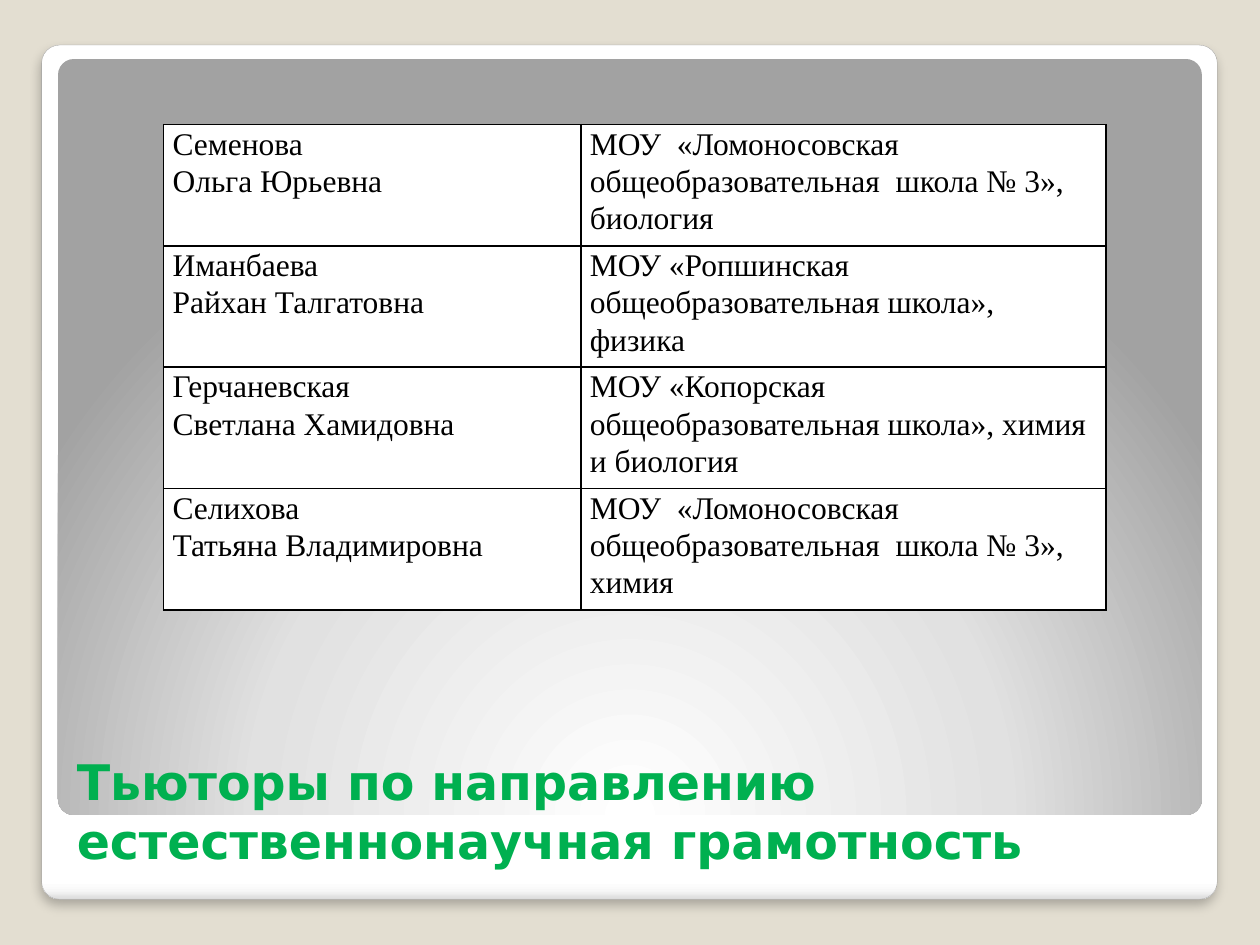
"""Build a slide listing the tutors for science literacy."""
from lxml.etree import SubElement
from pptx import Presentation
from pptx.dml.color import RGBColor
from pptx.enum.shapes import MSO_SHAPE
from pptx.enum.text import MSO_ANCHOR
from pptx.oxml import parse_xml
from pptx.oxml.ns import nsdecls, qn
from pptx.util import Cm, Pt

TITLE = "Тьюторы по направлению естественнонаучная грамотность"
TUTORS = [
    (["Семенова", "Ольга Юрьевна"],
     ["МОУ  «Ломоносовская общеобразовательная  школа № 3»,  биология"]),
    (["Иманбаева", "Райхан Талгатовна"],
     ["МОУ «Ропшинская общеобразовательная школа», физика"]),
    (["Герчаневская", "Светлана Хамидовна"],
     ["МОУ «Копорская общеобразовательная школа», химия и биология"]),
    (["Селихова", "Татьяна Владимировна"],
     ["МОУ  «Ломоносовская общеобразовательная  школа № 3»,  химия"]),
]
THEME = {
    "bg": "E3DED1", "title": "00B050", "text": "000000", "cell": "FFFFFF",
    "edge": "A4A4A4", "border": "000000", "shadow": "000000",
    "title_font": "DejaVu Sans", "text_font": "Times New Roman",
    "title_size": 28, "text_size": 18,
}
FRAME_STOPS = [(0, "FFFFFF"), (98, "FFFFFF"), (99, "F7F7F7"), (100, "DADADA")]
PANEL_STOPS = [(0, "FFFFFF"), (55, "E1E1E1"), (100, "A2A2A2")]
FRAME_SHADE = '<a:lin ang="5400000" scaled="0"/>'
PANEL_SHADE = ('<a:path path="circle"><a:fillToRect l="50000" t="175000" '
               'r="50000" b="-75000"/></a:path>')
FRAME_BOX = (0.84, 0.91, 23.7, 17.22)
PANEL_BOX = (1.17, 1.19, 23.06, 15.24)
TITLE_BOX = (1.3, 14.73, 22.73, 2.92)
TABLE_AT = (3.3, 2.51)
COLS = (8.41, 10.59)
ROW_H = 2.26


def rgb(key):
    return RGBColor.from_string(THEME[key])


def add_panel(s, box, stops, shade):
    sp = s.shapes.add_shape(MSO_SHAPE.ROUNDED_RECTANGLE, *map(Cm, box))
    sp.adjustments[0] = 0.021
    sp.shadow.inherit = False
    sp.line.fill.background()
    sp.fill.background()
    gs = "".join(f'<a:gs pos="{pos * 1000}"><a:srgbClr val="{color}"/></a:gs>'
                 for pos, color in stops)
    grad = parse_xml(f'<a:gradFill {nsdecls("a")} rotWithShape="1">'
                     f'<a:gsLst>{gs}</a:gsLst>{shade}</a:gradFill>')
    spPr = sp._element.spPr
    spPr.replace(spPr.find(qn("a:noFill")), grad)
    return sp


def add_shadow(sp):
    effects = sp._element.spPr.find(qn("a:effectLst"))
    effects.append(parse_xml(
        f'<a:outerShdw {nsdecls("a")} blurRad="{Pt(6)}" dist="{Pt(4)}" '
        f'dir="5400000" algn="t" rotWithShape="0">'
        f'<a:srgbClr val="{THEME["shadow"]}"><a:alpha val="25000"/></a:srgbClr>'
        f'</a:outerShdw>'))


def add_run(p, text, kind, bold=False):
    r = p.add_run()
    r.text = text
    r.font.name = THEME[f"{kind}_font"]
    r.font.size = Pt(THEME[f"{kind}_size"])
    r.font.bold = bold
    r.font.color.rgb = rgb(kind)


def add_borders(cell):
    tcPr = cell._tc.get_or_add_tcPr()
    for i, side in enumerate(("lnL", "lnR", "lnT", "lnB")):
        ln = parse_xml(f'<a:{side} {nsdecls("a")} w="{Pt(1)}"/>')
        fill = SubElement(ln, qn("a:solidFill"))
        SubElement(fill, qn("a:srgbClr"), val=THEME["border"])
        tcPr.insert(i, ln)


def fill_cell(cell, lines):
    cell.fill.solid()
    cell.fill.fore_color.rgb = rgb("cell")
    cell.margin_left = cell.margin_right = Cm(0.18)
    cell.margin_top = cell.margin_bottom = 0
    tf = cell.text_frame
    for i, line in enumerate(lines):
        p = tf.add_paragraph() if i else tf.paragraphs[0]
        p.line_spacing = 1.07
        add_run(p, line, "text")
    add_borders(cell)


def add_tutors(s):
    size = (sum(COLS), ROW_H * len(TUTORS))
    tbl = s.shapes.add_table(len(TUTORS), len(COLS),
                             *map(Cm, TABLE_AT + size)).table
    tbl.first_row = tbl.horz_banding = False
    for col, width in zip(tbl.columns, COLS):
        col.width = Cm(width)
    for row, tutor in zip(tbl.rows, TUTORS):
        row.height = Cm(ROW_H)
        for cell, lines in zip(row.cells, tutor):
            fill_cell(cell, lines)


def add_title(s):
    tf = s.shapes.add_textbox(*map(Cm, TITLE_BOX)).text_frame
    tf.word_wrap = True
    tf.vertical_anchor = MSO_ANCHOR.BOTTOM
    add_run(tf.paragraphs[0], TITLE, "title", bold=True)


def main():
    prs = Presentation()
    prs.slide_width, prs.slide_height = Cm(25.4), Cm(19.05)
    s = prs.slides.add_slide(prs.slide_layouts[6])
    s.background.fill.solid()
    s.background.fill.fore_color.rgb = rgb("bg")
    frame = add_panel(s, FRAME_BOX, FRAME_STOPS, FRAME_SHADE)
    frame.line.color.rgb = rgb("edge")
    frame.line.width = Pt(0.16)
    add_shadow(frame)
    add_panel(s, PANEL_BOX, PANEL_STOPS, PANEL_SHADE)
    add_title(s)
    add_tutors(s)
    prs.save("out.pptx")


if __name__ == "__main__":
    main()
